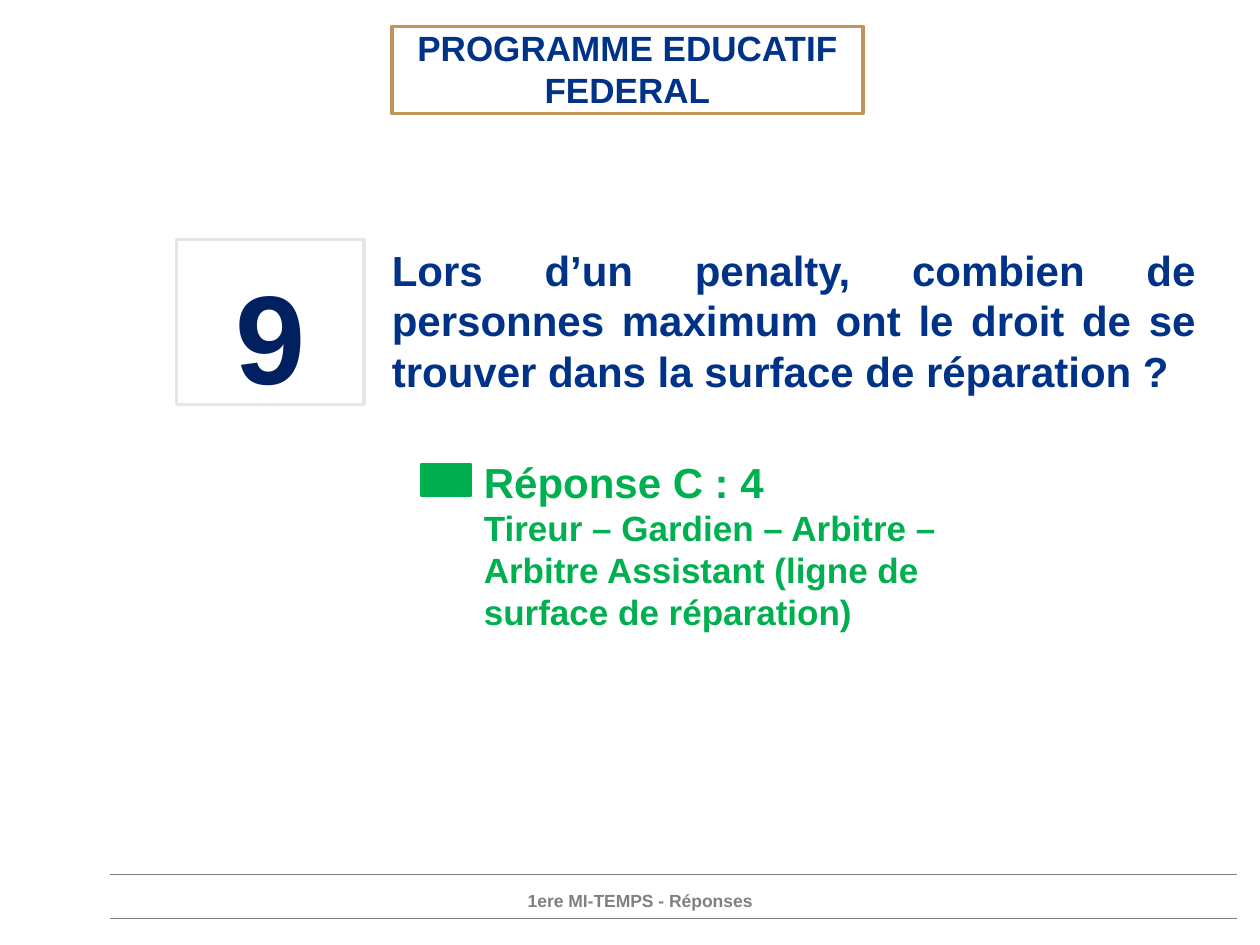
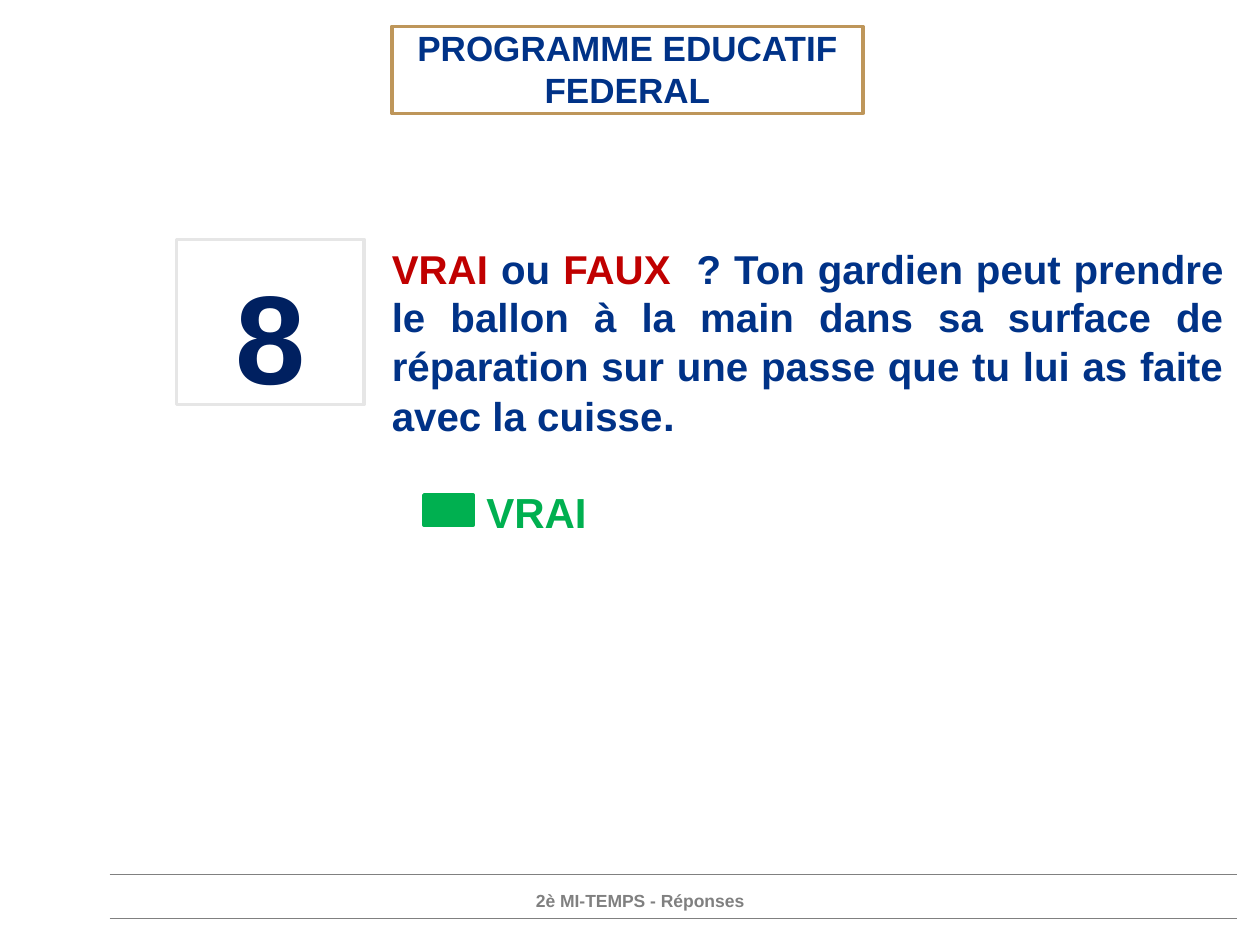
from pptx import Presentation
from pptx.dml.color import RGBColor
from pptx.enum.shapes import MSO_CONNECTOR, MSO_SHAPE
from pptx.enum.text import MSO_ANCHOR, PP_ALIGN
from pptx.oxml.ns import qn
from pptx.util import Pt
from lxml import etree

RECT = MSO_SHAPE.RECTANGLE
LINE = MSO_CONNECTOR.STRAIGHT
TOP = MSO_ANCHOR.TOP
LEFT, MID, FULL = PP_ALIGN.LEFT, PP_ALIGN.CENTER, PP_ALIGN.JUSTIFY

FONT = "Arial"
HUES = {
    "white": "FFFFFF", "blue": "003287", "navy": "002060", "gold": "BE965A",
    "pale": "E6E6E6", "grey": "808080", "green": "00B050", "red": "C00000",
}


def hue(name):
    return RGBColor.from_string(HUES[name])


def write(shape, paras, align, inset=0):
    """Fill a shape; each paragraph is a list of (text, size, colour) runs."""
    frame = shape.text_frame
    frame.word_wrap = True
    frame.vertical_anchor = TOP
    frame.margin_left = frame.margin_right = frame.margin_bottom = 0
    frame.margin_top = Pt(inset)
    for i, runs in enumerate(paras):
        para = frame.add_paragraph() if i else frame.paragraphs[0]
        para.alignment = align
        for text, size, color in runs:
            run = para.add_run()
            run.text = text
            run.font.name = FONT
            run.font.size = Pt(size)
            run.font.bold = True
            run.font.color.rgb = hue(color)


def add_rect(slide, box, fill, edge):
    shape = slide.shapes.add_shape(RECT, *map(Pt, box))
    shape.shadow.inherit = False
    shape.fill.solid()
    shape.fill.fore_color.rgb = hue(fill)
    shape.line.color.rgb = hue(edge)
    shape.line.width = Pt(2)
    return shape


def add_text(slide, box, paras, align):
    write(slide.shapes.add_textbox(*map(Pt, box)), paras, align)


def add_rule(slide, y):
    rule = slide.shapes.add_connector(LINE, Pt(62.6), Pt(y), Pt(707), Pt(y))
    rule.line.color.rgb = hue("grey")
    rule.line.width = Pt(0.75)
    etree.SubElement(rule._element.spPr, qn("a:effectLst"))


def add_frame(slide, footer):
    """Title band and footer shared by all slides."""
    for y in (499.7, 524.9):
        add_rule(slide, y)
    band = add_rect(slide, (223.9, 15.1, 269.3, 49.7), "white", "gold")
    write(band, [[("PROGRAMME EDUCATIF FEDERAL", 20, "blue")]], MID)
    add_text(slide, (190, 508.3, 351.4, 14.4), [[(footer, 10, "grey")]], MID)


def add_query(slide, number, runs, width):
    add_text(slide, (223.9, 139.7, width, 92.2), [runs], FULL)
    tile = add_rect(slide, (100.8, 136.8, 107.3, 94.3), "white", "pale")
    write(tile, [[(number, 72, "navy")]], MID, inset=11)


def add_reply(slide, box, lines):
    """Answer text with its green marker on the left."""
    x, y = box[:2]
    panel = add_rect(slide, box, "white", "white")
    write(panel, [[(text, size, "green")] for text, size in lines], LEFT)
    add_rect(slide, (x - 35.6, y + 5, 28.1, 17.3), "green", "green")


def main():
    deck = Presentation()
    deck.slide_width, deck.slide_height = Pt(720), Pt(540)
    blank = deck.slide_layouts[6]

    # First half, question 9
    slide = deck.slides.add_slide(blank)
    add_frame(slide, "1ere MI-TEMPS - Réponses")
    add_query(slide, "9", [
        ("Lors d’un penalty, combien de personnes maximum ont le droit "
         "de se trouver dans la surface de réparation ?", 24, "blue"),
    ], 459.4)
    add_reply(slide, (276.5, 260.6, 275.8, 92.2), [
        ("Réponse C : 4", 24),
        ("Tireur – Gardien – Arbitre – Arbitre Assistant "
         "(ligne de surface de réparation)", 20),
    ])

    # Second half, question 8
    slide = deck.slides.add_slide(blank)
    add_frame(slide, "2è MI-TEMPS - Réponses")
    add_query(slide, "8", [
        ("VRAI", 23, "red"),
        (" ou ", 23, "blue"),
        ("FAUX ", 23, "red"),
        (" ? Ton gardien peut prendre le ballon à la main dans sa surface "
         "de réparation sur une passe que tu lui as faite avec la cuisse",
         23, "blue"),
        (".", 24, "blue"),
    ], 475.9)
    add_reply(slide, (277.9, 277.9, 263.5, 92.2), [("VRAI", 24)])

    deck.save("out.pptx")


if __name__ == "__main__":
    main()
